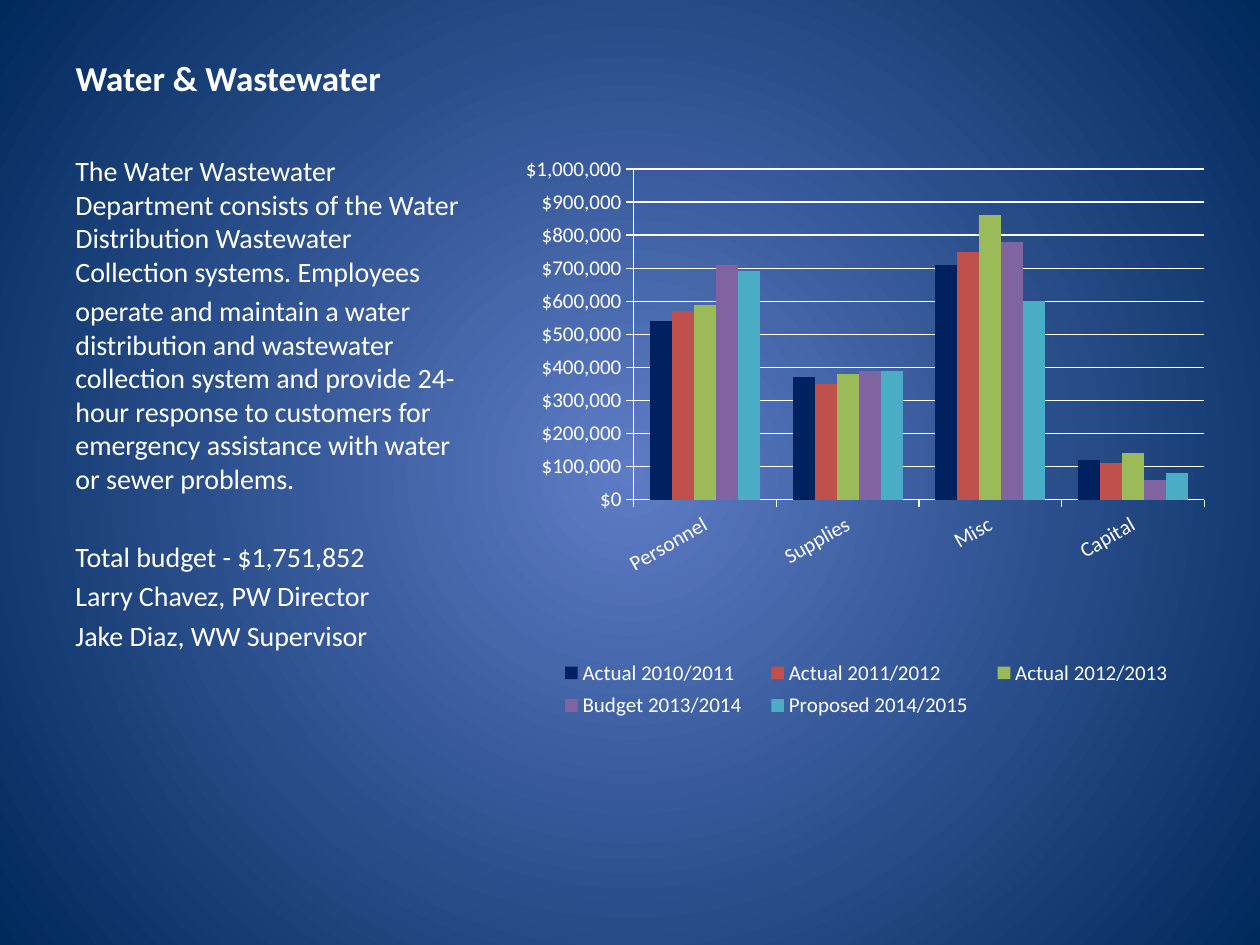
from lxml.etree import SubElement
from pptx import Presentation
from pptx.chart.data import CategoryChartData
from pptx.dml.color import RGBColor
from pptx.enum.chart import XL_CHART_TYPE, XL_LEGEND_POSITION, XL_TICK_MARK
from pptx.enum.text import MSO_ANCHOR, PP_ALIGN
from pptx.oxml import parse_xml
from pptx.oxml.ns import nsdecls, qn
from pptx.util import Inches, Pt

WHITE = RGBColor(0xFF, 0xFF, 0xFF)
GLOW = RGBColor(0x5E, 0x7C, 0xC5)
NAVY = RGBColor(0x00, 0x29, 0x5C)
FONT = "Calibri"

INTRO = [
    "The Water Wastewater Department consists of the Water Distribution "
    "Wastewater Collection systems. Employees",
    "operate and maintain a water distribution and wastewater collection "
    "system and provide 24-hour response to customers for emergency "
    "assistance with water or sewer problems.",
]
FACTS = [
    "Total budget - $1,751,852",
    "Larry Chavez, PW Director",
    "Jake Diaz, WW Supervisor",
]
GROUPS = ["Personnel", "Supplies", "Misc", "Capital"]
YEARS = [
    ("Actual 2010/2011", (540000, 370000, 710000, 120000), RGBColor(0x00, 0x20, 0x60)),
    ("Actual 2011/2012", (570000, 350000, 750000, 110000), RGBColor(0xC0, 0x50, 0x4D)),
    ("Actual 2012/2013", (590000, 380000, 860000, 140000), RGBColor(0x9B, 0xBB, 0x59)),
    ("Budget 2013/2014", (710000, 390000, 780000, 60000), RGBColor(0x80, 0x64, 0xA2)),
    ("Proposed 2014/2015", (690000, 390000, 600000, 80000), RGBColor(0x4B, 0xAC, 0xC6)),
]


def set_font(font, size, bold=False):
    font.name = FONT
    font.size = Pt(size)
    font.bold = bold
    font.color.rgb = WHITE


def write(frame, text, size=16, bold=False, before=0):
    """Add a paragraph, using the first one while it is still empty."""
    para = frame.paragraphs[0]
    if para.runs:
        para = frame.add_paragraph()
    para.alignment = PP_ALIGN.LEFT
    para.space_before = Pt(before)
    run = para.add_run()
    run.text = text
    set_font(run.font, size, bold)


def paint_back(slide):
    """Fill the background with a gradient that spreads from the centre."""
    fill = slide.background.fill
    fill.gradient()
    for stop, color in zip(fill.gradient_stops, (GLOW, NAVY)):
        stop.color.rgb = color
    for stop, place in zip(fill.gradient_stops, (0, 1)):
        stop.position = place
    grad = slide.background._cSld.find(".//" + qn("a:gradFill"))
    grad.remove(grad.find(qn("a:lin")))
    ring = SubElement(grad, qn("a:path"), path="circle")
    SubElement(ring, qn("a:fillToRect"), l="50000", t="50000", r="50000", b="50000")


def add_title(slide):
    title = slide.shapes.title
    title.left, title.top = Inches(0.5), Inches(0.3)
    title.width, title.height = Inches(3.29), Inches(0.53)
    frame = title.text_frame
    frame.vertical_anchor = MSO_ANCHOR.BOTTOM
    write(frame, "Water & Wastewater", size=20, bold=True)


def add_body(slide):
    box = slide.shapes.add_textbox(Inches(0.5), Inches(1.17), Inches(3.29), Inches(5.53))
    frame = box.text_frame
    frame.word_wrap = True
    for text in INTRO:
        write(frame, text, before=3.2)
    for i, text in enumerate(FACTS):
        write(frame, text, before=3.2 if i else 25.5)


def lay_out(part, index, x, y, w, h, inner=False):
    """Place a chart part by fractions of the chart's size."""
    for old in part.findall(qn("c:layout")):
        part.remove(old)
    target = '<c:layoutTarget val="inner"/>' if inner else ""
    part.insert(index, parse_xml(
        f'<c:layout {nsdecls("c")}><c:manualLayout>{target}'
        '<c:xMode val="edge"/><c:yMode val="edge"/>'
        f'<c:x val="{x}"/><c:y val="{y}"/><c:w val="{w}"/><c:h val="{h}"/>'
        '</c:manualLayout></c:layout>'))


def style_line(line):
    line.color.rgb = WHITE
    line.width = Pt(0.75)


def style_axis(axis):
    axis.major_tick_mark = XL_TICK_MARK.OUTSIDE
    axis.minor_tick_mark = XL_TICK_MARK.NONE
    set_font(axis.tick_labels.font, 12)
    style_line(axis.format.line)


def add_budget(slide):
    data = CategoryChartData()
    data.categories = GROUPS
    for name, values, _ in YEARS:
        data.add_series(name, values)
    chart = slide.shapes.add_chart(
        XL_CHART_TYPE.COLUMN_CLUSTERED, Inches(4.08), Inches(0.83),
        Inches(5.59), Inches(6.4), data).chart
    set_font(chart.font, 18)
    chart.has_title = False

    plot = chart.plots[0]
    plot.gap_width = 150
    plot.overlap = 0
    plot.vary_by_categories = False
    for series, (_, _, color) in zip(plot.series, YEARS):
        series.format.fill.solid()
        series.format.fill.fore_color.rgb = color

    style_axis(chart.category_axis)
    turn = chart.category_axis._element.find(qn("c:txPr")).find(qn("a:bodyPr"))
    turn.set("rot", "-1800000")
    turn.set("vert", "horz")

    scale = chart.value_axis
    style_axis(scale)
    scale.minimum_scale, scale.maximum_scale = 0, 1000000
    scale.major_unit = 100000
    scale.has_major_gridlines = True
    style_line(scale.major_gridlines.format.line)
    scale.tick_labels.number_format = '"$"#,##0'
    scale.tick_labels.number_format_is_linked = False

    chart.has_legend = True
    legend = chart.legend
    legend.position = XL_LEGEND_POSITION.BOTTOM
    legend.include_in_layout = False
    set_font(legend.font, 12)
    lay_out(legend._element, 1, 0.04, 0.68, 0.92, 0.09)
    area = chart._chartSpace.find(".//" + qn("c:plotArea"))
    lay_out(area, 0, 0.17, 0.08, 0.81, 0.41, inner=True)


def main():
    deck = Presentation()
    deck.slide_width, deck.slide_height = Inches(10), Inches(7.5)
    slide = deck.slides.add_slide(deck.slide_layouts[5])
    paint_back(slide)
    add_title(slide)
    add_body(slide)
    add_budget(slide)
    deck.save("out.pptx")


if __name__ == "__main__":
    main()
